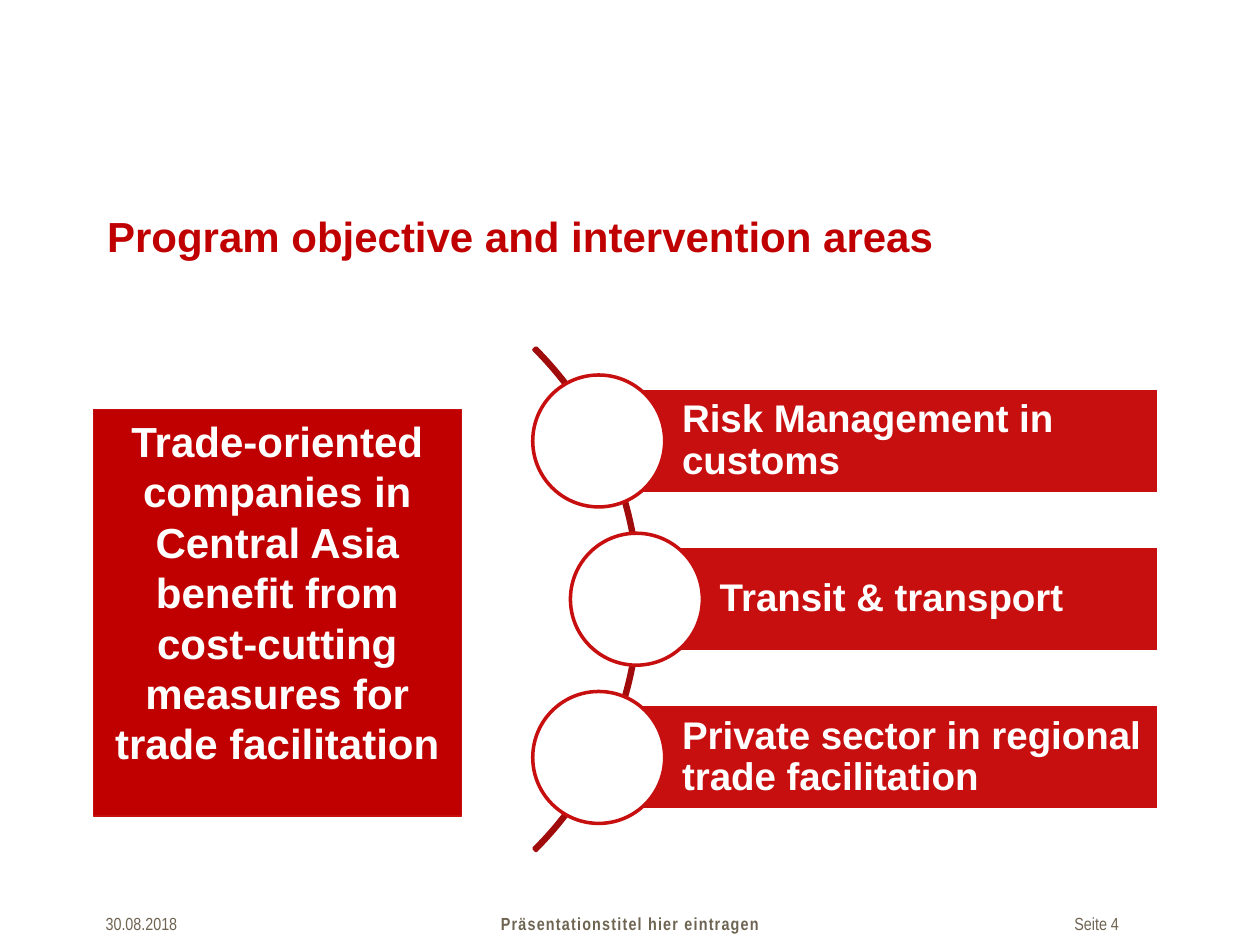
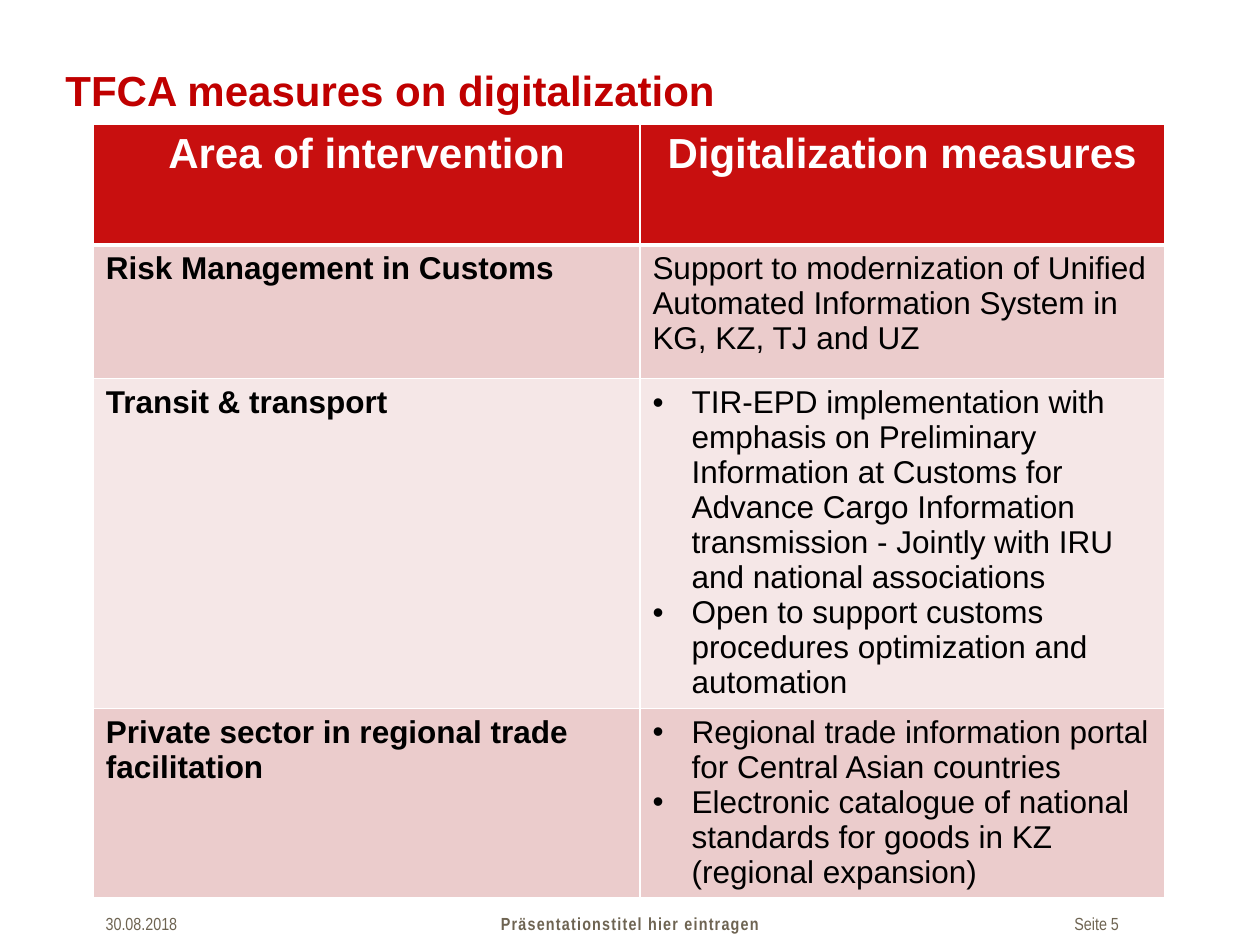
from pptx import Presentation
from pptx.dml.color import RGBColor
from pptx.enum.shapes import MSO_SHAPE
from pptx.enum.text import MSO_ANCHOR, PP_ALIGN
from pptx.oxml import parse_xml
from pptx.oxml.ns import nsdecls
from pptx.util import Cm, Pt

WHITE = RGBColor(0xFF, 0xFF, 0xFF)
BLACK = RGBColor(0x00, 0x00, 0x00)
TITLE_RED = RGBColor(0xC0, 0x00, 0x00)
ACCENT_RED = RGBColor(0xC8, 0x0F, 0x0F)
ARC_RED = RGBColor(0xA0, 0x0C, 0x0C)
FOOTER_GREY = RGBColor(0x6E, 0x64, 0x52)
ROW_DARK = RGBColor(0xEB, 0xCC, 0xCC)
ROW_LIGHT = RGBColor(0xF5, 0xE7, 0xE7)

FOOTER_DATE = "30.08.2018"
FOOTER_TITLE = "Präsentationstitel hier eintragen"

OBJECTIVE = ("Trade-oriented companies in Central Asia benefit from "
             "cost-cutting measures for trade facilitation")
AREAS = [
    ("Risk Management in customs", 12.07),
    ("Transit & transport", 12.83),
    ("Private sector in regional trade facilitation", 12.07),
]

HEADINGS = ["Area of intervention", "Digitalization measures"]
MEASURES = [
    ("Risk Management in Customs", [
        "Support to modernization of Unified Automated Information System in KG, KZ, TJ and UZ",
    ]),
    ("Transit & transport", [
        "TIR-EPD implementation with emphasis on Preliminary Information at Customs for "
        "Advance Cargo Information transmission - Jointly with IRU and national associations",
        "Open to support customs procedures optimization and automation",
    ]),
    ("Private sector in regional trade facilitation", [
        "Regional trade information portal for Central Asian countries",
        "Electronic catalogue of national standards for goods in KZ (regional expansion)",
    ]),
]
COLUMN_WIDTHS = [11.02, 10.57]
ROW_HEIGHTS = [2.43, 2.69, 6.65, 3.81]
ROW_FILLS = [ACCENT_RED, ROW_DARK, ROW_LIGHT, ROW_DARK]

BAR_RIGHT, BAR_HEIGHT, BAR_PITCH = 23.37, 2.13, 3.19
MIDDLE_Y = 12.08
CIRCLE_SIZE = 2.66
ARC_CENTER_X, ARC_SIZE = 5.74, 14.33
FOOTER_TOP, FOOTER_HEIGHT = 18.28, 0.69


def write(frame, *texts, size=24, color=WHITE, bold=False, font="Arial",
          align=PP_ALIGN.LEFT, line_spacing=None, spacing=None, bullets=False):
    for index, text in enumerate(texts):
        paragraph = frame.paragraphs[0] if index == 0 else frame.add_paragraph()
        paragraph.alignment = align
        if line_spacing:
            paragraph.line_spacing = line_spacing
        if bullets:
            properties = paragraph._p.get_or_add_pPr()
            properties.set("marL", str(Cm(0.79)))
            properties.set("indent", str(-Cm(0.79)))
            properties.append(parse_xml(f'<a:buFont {nsdecls("a")} typeface="Arial"/>'))
            properties.append(parse_xml(f'<a:buChar {nsdecls("a")} char="•"/>'))
        run = paragraph.add_run()
        run.text = text
        run.font.name = font
        run.font.size = Pt(size)
        run.font.bold = bold
        run.font.color.rgb = color
        if spacing:
            run._r.get_or_add_rPr().set("spc", str(int(spacing * 100)))


def add_text(slide, text, left, top, width, height, **text_format):
    frame = slide.shapes.add_textbox(Cm(left), Cm(top), Cm(width), Cm(height)).text_frame
    frame.word_wrap = True
    write(frame, text, **text_format)


def add_figure(slide, kind, left, top, width, height, fill=None, line=WHITE, line_width=2):
    shape = slide.shapes.add_shape(kind, Cm(left), Cm(top), Cm(width), Cm(height))
    shape.shadow.inherit = False
    if fill is None:
        shape.fill.background()
    else:
        shape.fill.solid()
        shape.fill.fore_color.rgb = fill
    shape.line.color.rgb = line
    shape.line.width = Pt(line_width)
    return shape


def add_page(presentation, title, number, left, top):
    slide = presentation.slides.add_slide(presentation.slide_layouts[6])
    add_text(slide, title, left, top, 21.59, 1.73, color=TITLE_RED, bold=True)
    footer = dict(size=10, color=FOOTER_GREY, font="Arial Narrow")
    add_text(slide, FOOTER_DATE, 1.88, FOOTER_TOP, 3.61, FOOTER_HEIGHT, **footer)
    add_text(slide, FOOTER_TITLE, 7.95, FOOTER_TOP, 9.5, FOOTER_HEIGHT, bold=True,
             spacing=0.7, align=PP_ALIGN.CENTER, **footer)
    add_text(slide, f"Seite {number}", 21.41, FOOTER_TOP, 2.57, FOOTER_HEIGHT, **footer)
    return slide


def add_objective(slide):
    box = add_figure(slide, MSO_SHAPE.RECTANGLE, 1.88, 8.25, 7.42, 8.2,
                     fill=TITLE_RED, line=ACCENT_RED, line_width=0.75)
    frame = box.text_frame
    frame.word_wrap = True
    frame.vertical_anchor = MSO_ANCHOR.TOP
    write(frame, OBJECTIVE, bold=True, align=PP_ALIGN.CENTER)


def add_areas(slide):
    arc = add_figure(slide, MSO_SHAPE.BLOCK_ARC, ARC_CENTER_X - ARC_SIZE / 2,
                     MIDDLE_Y - ARC_SIZE / 2, ARC_SIZE, ARC_SIZE, line=ARC_RED)
    for index, value in enumerate([189, 27, 0.004]):
        arc.adjustments[index] = value
    for index, (area, left) in enumerate(AREAS):
        center_y = MIDDLE_Y + (index - 1) * BAR_PITCH
        bar = add_figure(slide, MSO_SHAPE.RECTANGLE, left, center_y - BAR_HEIGHT / 2,
                         BAR_RIGHT - left, BAR_HEIGHT, fill=ACCENT_RED)
        frame = bar.text_frame
        frame.word_wrap = True
        frame.vertical_anchor = MSO_ANCHOR.MIDDLE
        frame.margin_left = Cm(1.68)
        frame.margin_top = frame.margin_right = frame.margin_bottom = Cm(0.15)
        write(frame, area, size=22, bold=True, line_spacing=0.9)
        add_figure(slide, MSO_SHAPE.OVAL, left - CIRCLE_SIZE / 2, center_y - CIRCLE_SIZE / 2,
                   CIRCLE_SIZE, CIRCLE_SIZE, fill=WHITE, line=ACCENT_RED)


def set_border(cell, side, width):
    cell._tc.get_or_add_tcPr().append(parse_xml(
        f'<a:{side} {nsdecls("a")} w="{Pt(width)}"><a:solidFill>'
        f'<a:srgbClr val="{WHITE}"/></a:solidFill></a:{side}>'))


def add_measures(slide):
    table = slide.shapes.add_table(len(ROW_HEIGHTS), len(COLUMN_WIDTHS), Cm(1.88), Cm(2.51),
                                   Cm(sum(COLUMN_WIDTHS)), Cm(sum(ROW_HEIGHTS))).table
    for column, width in zip(table.columns, COLUMN_WIDTHS):
        column.width = Cm(width)
    for index, heading in enumerate(HEADINGS):
        write(table.cell(0, index).text_frame, heading, bold=True, align=PP_ALIGN.CENTER)
    body = dict(size=18, color=BLACK, line_spacing=Pt(20))
    for index, (area, measures) in enumerate(MEASURES, start=1):
        write(table.cell(index, 0).text_frame, area, bold=True, **body)
        write(table.cell(index, 1).text_frame, *measures, bullets=len(measures) > 1, **body)
    for index, (height, fill) in enumerate(zip(ROW_HEIGHTS, ROW_FILLS)):
        table.rows[index].height = Cm(height)
        for cell in table.rows[index].cells:
            for side in ("lnL", "lnR", "lnT", "lnB"):
                under_heading = (index, side) in [(0, "lnB"), (1, "lnT")]
                set_border(cell, side, 3 if under_heading else 1)
            cell.fill.solid()
            cell.fill.fore_color.rgb = fill


def main():
    presentation = Presentation()
    presentation.slide_width = Cm(25.4)
    presentation.slide_height = Cm(19.05)
    slide = add_page(presentation, "Program objective and intervention areas", 4, 1.91, 4.11)
    add_areas(slide)
    add_objective(slide)
    slide = add_page(presentation, "TFCA measures on digitalization", 5, 1.07, 1.17)
    add_measures(slide)
    presentation.save("out.pptx")


if __name__ == "__main__":
    main()
